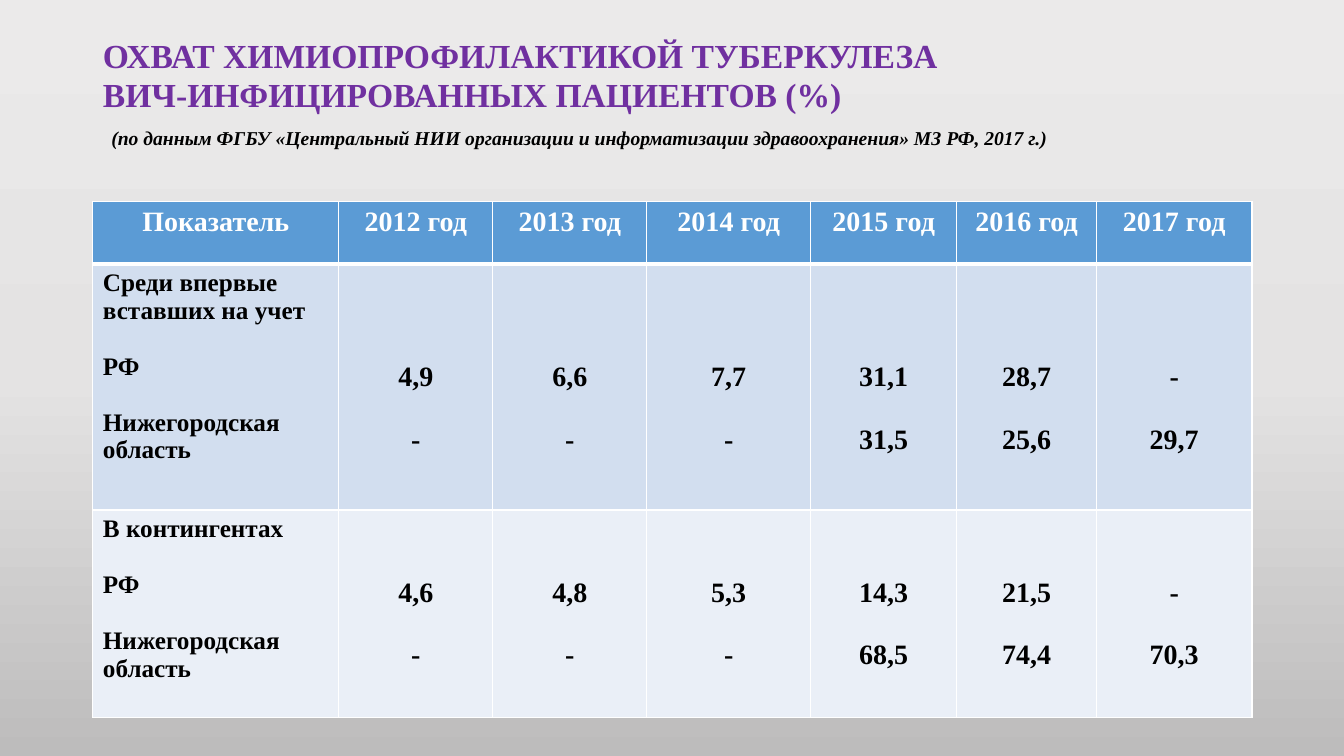
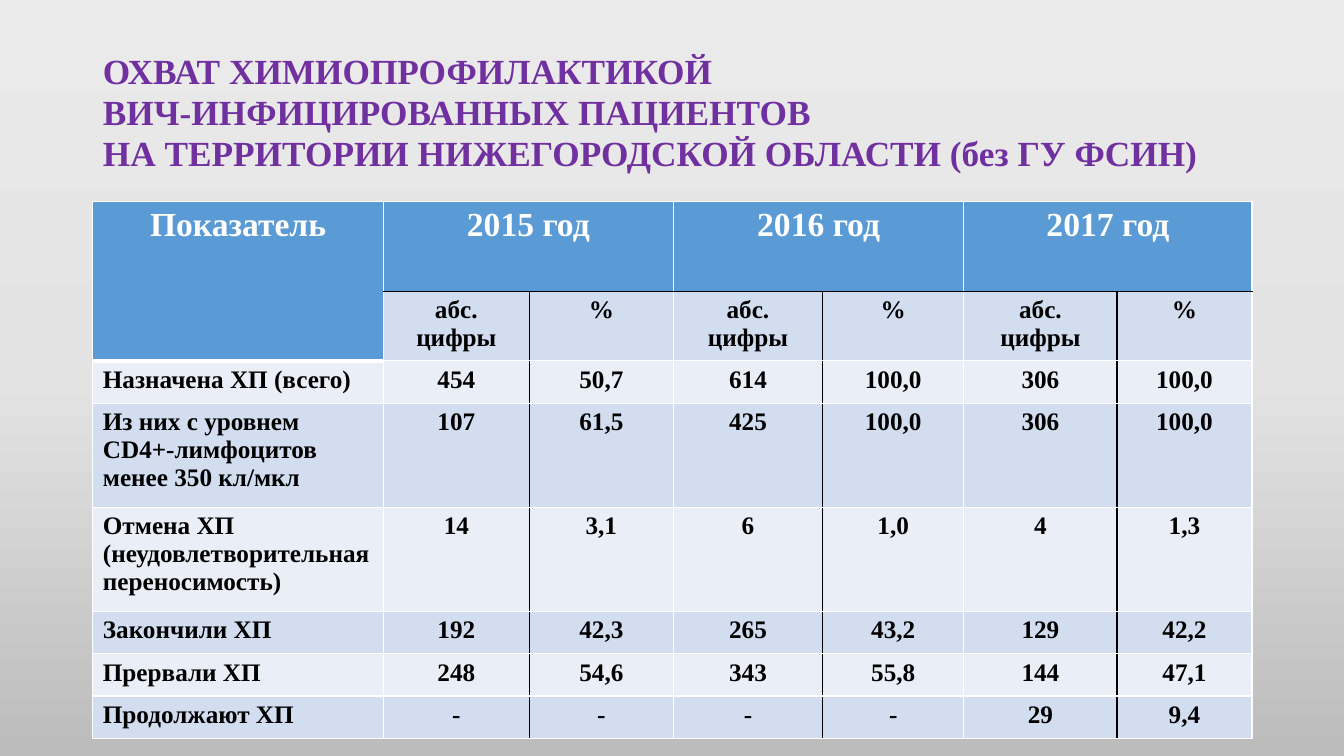
from copy import deepcopy

from lxml.etree import SubElement
from pptx import Presentation
from pptx.dml.color import RGBColor
from pptx.enum.text import MSO_ANCHOR as Anchor, MSO_AUTO_SIZE as AutoSize, PP_ALIGN as Align
from pptx.oxml.ns import qn
from pptx.util import Cm, Pt

FONT = "Times New Roman"
PURPLE, BLACK, WHITE = "7030A0", "000000", "FFFFFF"
HEADER_FILL = "5B9BD5"
BAND_FILLS = ["EAEFF7", "D2DEEF"]
BACKGROUND = ["EBEAEA", "E4E3E3", "BDBCBC"]
LEFT, WIDTH, TABLE_TOP = 2.34, 29.21, 5.08

COVERAGE_HEADER = ["Показатель"] + [f"{year} год" for year in range(2012, 2018)]
COVERAGE_ROWS = [
    ["Среди впервые вставших на учет\nРФ\nНижегородская область",
     "4,9\n-", "6,6\n-", "7,7\n-", "31,1\n31,5", "28,7\n25,6", "-\n29,7"],
    ["В контингентах\nРФ\nНижегородская область",
     "4,6\n-", "4,8\n-", "5,3\n-", "14,3\n68,5", "21,5\n74,4", "-\n70,3"],
]
COVERAGE_TOP_MARGINS = [2.47, 1.69]

REGION_HEADER = ["Показатель", "2015 год", "", "2016 год", "", "2017 год", ""]
REGION_ROWS = [
    [""] + ["абс.\nцифры", "%"] * 3,
    ["Назначена ХП (всего)", "454", "50,7", "614", "100,0", "306", "100,0"],
    ["Из них с уровнем CD4+-лимфоцитов менее 350 кл/мкл",
     "107", "61,5", "425", "100,0", "306", "100,0"],
    ["Отмена ХП (неудовлетворительная переносимость)",
     "14", "3,1", "6", "1,0", "4", "1,3"],
    ["Закончили ХП", "192", "42,3", "265", "43,2", "129", "42,2"],
    ["Прервали ХП", "248", "54,6", "343", "55,8", "144", "47,1"],
    ["Продолжают ХП", "-", "-", "-", "-", "29", "9,4"],
]


def rgb(value):
    return RGBColor.from_string(value)


def format_runs(paragraph, size, color, italic=False):
    for run in paragraph.runs:
        font = run.font
        font.name, font.size, font.bold, font.italic = FONT, Pt(size), True, italic
        font.color.rgb = rgb(color)


def set_background(master):
    fill = master.background.fill
    fill.gradient()
    fill.gradient_angle = 270
    stop_list = master.element.find(".//" + qn("p:bg")).find(".//" + qn("a:gsLst"))
    stop_list.insert(1, deepcopy(stop_list[0]))
    for index, (stop, color) in enumerate(zip(fill.gradient_stops, BACKGROUND)):
        stop.position = index / 2
        stop.color.rgb = rgb(color)


def add_titled_slide(presentation, title, top, height, size, source=None):
    slide = presentation.slides.add_slide(presentation.slide_layouts[5])
    shape = slide.shapes.title
    shape.left, shape.top, shape.width, shape.height = map(Cm, (LEFT, top, WIDTH, height))
    frame = shape.text_frame
    frame.text = title
    frame.word_wrap = True
    frame.auto_size = AutoSize.NONE
    frame.vertical_anchor = Anchor.MIDDLE
    format_runs(frame.paragraphs[0], size, PURPLE)
    if source:
        paragraph = frame.add_paragraph()
        paragraph.text = source
        paragraph.space_before = Pt(8)
        paragraph._p.get_or_add_pPr().set("marL", str(Cm(0.21)))
        format_runs(paragraph, 14, BLACK, italic=True)
    for paragraph in frame.paragraphs:
        paragraph.alignment = Align.LEFT
        paragraph.line_spacing = 0.97
    return slide


def set_borders(cell, edges):
    properties = cell._tc.get_or_add_tcPr()
    for side in "LRTB":
        color, width = edges.get(side, (WHITE, 1))
        line = SubElement(properties, qn(f"a:ln{side}"), w=str(Pt(width)))
        SubElement(SubElement(line, qn("a:solidFill")), qn("a:srgbClr"), val=color)


def write_cell(cell, text, size, color, centered, gap=0):
    frame = cell.text_frame
    frame.text = text
    for index, paragraph in enumerate(frame.paragraphs):
        paragraph.alignment = Align.CENTER if centered else Align.LEFT
        if index:
            paragraph.space_before = Pt(gap)
        format_runs(paragraph, size, color)


def add_table(slide, widths, heights, rows, header_size, value_size, edge_rule, merges=(), gap=0):
    frame = slide.shapes.add_table(len(rows), len(widths), Cm(LEFT), Cm(TABLE_TOP),
                                   Cm(sum(widths)), Cm(sum(heights)))
    table = frame.table
    for column, width in zip(table.columns, widths):
        column.width = Cm(width)
    for row, height in zip(table.rows, heights):
        row.height = Cm(height)
    for first, last in merges:
        table.cell(*first).merge(table.cell(*last))
    for row_index, row in enumerate(rows):
        for column_index, text in enumerate(row):
            cell = table.cell(row_index, column_index)
            is_header = row_index == 0 or cell.is_spanned
            set_borders(cell, edge_rule(row_index, column_index))
            cell.fill.solid()
            cell.fill.fore_color.rgb = rgb(HEADER_FILL if is_header else BAND_FILLS[row_index % 2])
            if is_header and text:
                write_cell(cell, text, header_size, WHITE, True)
            elif text:
                size = value_size if column_index else 18
                write_cell(cell, text, size, BLACK, column_index > 0, gap * size)
    return table


def coverage_edges(row, column):
    return {"B": (WHITE, 3)} if row == 0 else {"T": (WHITE, 3)} if row == 1 else {}


def region_edges(row, column):
    black = (BLACK, 1)
    if column == 0:
        return {"B": (WHITE, 3)} if row < 2 else {}
    if row == 0:
        return {"B": black}
    edges = {"R" if column % 2 else "L": black}
    if row == 1:
        edges["T"] = black
    return edges


def add_coverage_slide(presentation):
    slide = add_titled_slide(
        presentation,
        "ОХВАТ ХИМИОПРОФИЛАКТИКОЙ ТУБЕРКУЛЕЗА\vВИЧ-ИНФИЦИРОВАННЫХ ПАЦИЕНТОВ (%)",
        0.41, 3.89, 24,
        "(по данным ФГБУ «Центральный НИИ организации и информатизации "
        "здравоохранения» МЗ РФ, 2017 г.)")
    table = add_table(slide, [6.2, 3.88, 3.88, 4.13, 3.68, 3.52, 3.92], [1.57, 6.2, 5.23],
                      [COVERAGE_HEADER] + COVERAGE_ROWS, 20, 20, coverage_edges, gap=1.11)
    for row_index, margin in enumerate(COVERAGE_TOP_MARGINS, 1):
        for column_index in range(1, len(COVERAGE_HEADER)):
            table.cell(row_index, column_index).margin_top = Cm(margin)


def add_region_slide(presentation):
    slide = add_titled_slide(
        presentation,
        "ОХВАТ ХИМИОПРОФИЛАКТИКОЙ\vВИЧ-ИНФИЦИРОВАННЫХ ПАЦИЕНТОВ\v"
        "НА ТЕРРИТОРИИ НИЖЕГОРОДСКОЙ ОБЛАСТИ (без ГУ ФСИН)",
        1.02, 3.68, 25.2)
    merges = [((0, 0), (1, 0))] + [((0, column), (0, column + 1)) for column in (1, 3, 5)]
    add_table(slide, [7.32, 3.68, 3.63, 3.76, 3.56, 3.86, 3.4],
              [2.26, 1.75, 1.07, 2.62, 2.62, 1.07, 1.07, 1.07],
              [REGION_HEADER] + REGION_ROWS, 24, 18, region_edges, merges)


def main():
    presentation = Presentation()
    presentation.slide_width, presentation.slide_height = Cm(33.87), Cm(19.05)
    set_background(presentation.slide_master)
    add_coverage_slide(presentation)
    add_region_slide(presentation)
    presentation.save("out.pptx")


if __name__ == "__main__":
    main()
